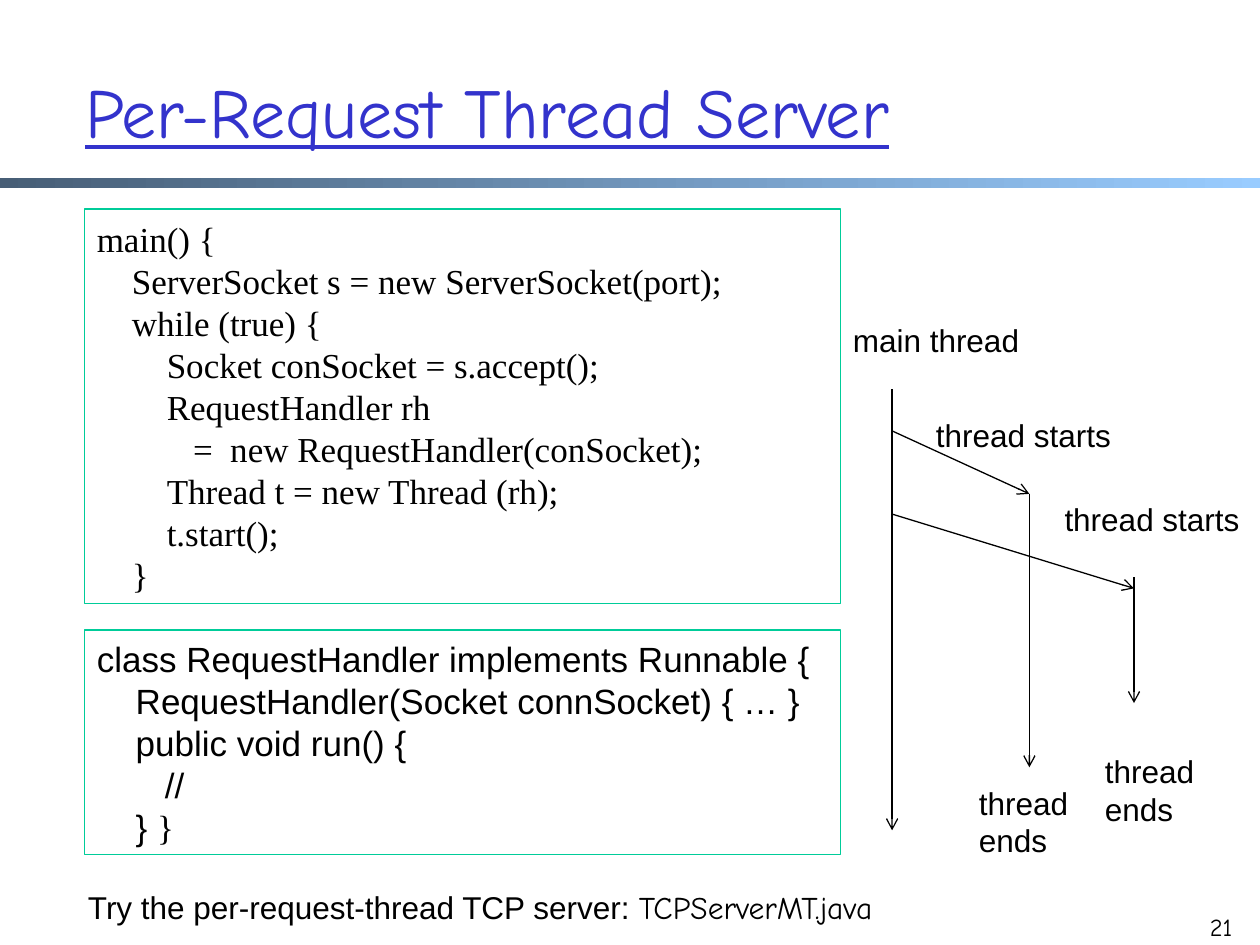
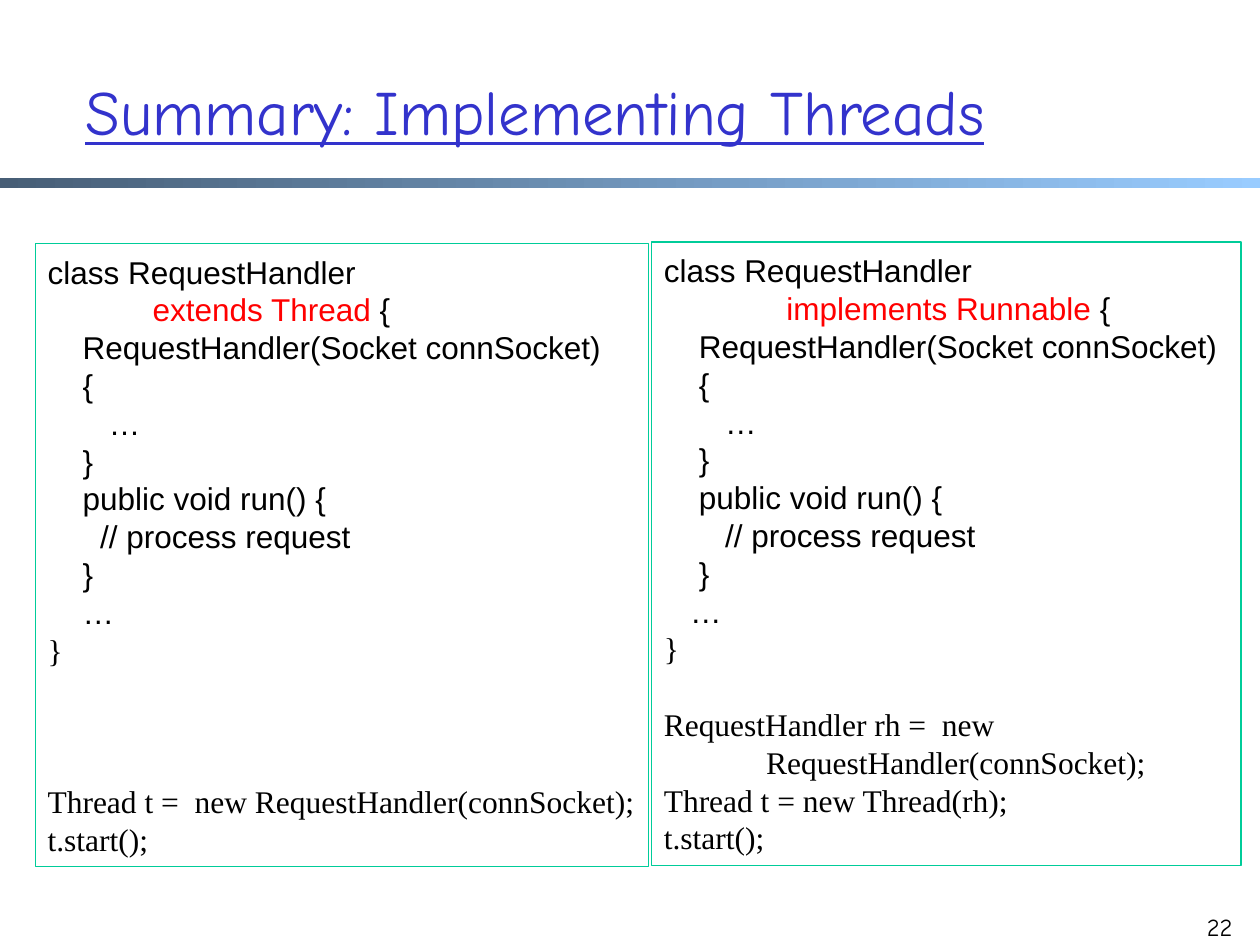
import pptx
import pptx.dml.color
import pptx.enum.shapes
import pptx.enum.text
import pptx.oxml
import pptx.oxml.ns
import pptx.util
from dataclasses import dataclass
from pptx.util import Inches

BLUE, BLACK, RED, GREEN = "3333CC", "000000", "FF0000", "00CC99"
BAND_FROM, BAND_TO = "475E76", "99CCFF"
COMIC, SANS, SERIF = "Comic Neue", "Arial", "Times New Roman"
SPACE_EM = {SANS: 0.278, SERIF: 0.25, COMIC: 0.25}  # width of one indent column
LEADING = 1.2


@dataclass
class Run:
    text: str
    font: str = SANS
    color: str = BLACK


@dataclass
class Line:
    runs: list
    indent: int = 0  # columns
    gap: int = 0     # empty lines above


def sans(text, indent=0):
    return Line([Run(text)], indent)


def serif(text, indent=0, gap=0):
    return Line([Run(text, SERIF)], indent, gap)


def rgb(value):
    return pptx.dml.color.RGBColor.from_string(value)


def write_lines(tf, lines, size):
    """One paragraph per line, indented by whole columns."""
    for i, line in enumerate(lines):
        p = tf.paragraphs[0] if i == 0 else tf.add_paragraph()
        p.alignment = pptx.enum.text.PP_ALIGN.LEFT
        p.line_spacing = pptx.util.Pt(LEADING * size)
        p.space_before = pptx.util.Pt(line.gap * LEADING * size)
        columns = line.indent * SPACE_EM[line.runs[0].font]
        p._p.get_or_add_pPr().set("marL", str(pptx.util.Pt(columns * size)))
        for run in line.runs:
            r = p.add_run()
            r.text = run.text
            r.font.name = run.font
            r.font.size = pptx.util.Pt(size)
            r.font.color.rgb = rgb(run.color)


def add_text(slide, box, lines, size):
    sp = slide.shapes.add_textbox(*map(Inches, box))
    tf = sp.text_frame
    tf.word_wrap = True
    write_lines(tf, lines, size)
    return tf


def add_code_box(slide, box, lines, size):
    sp = slide.shapes.add_shape(
        pptx.enum.shapes.MSO_SHAPE.RECTANGLE, *map(Inches, box))
    sp.shadow.inherit = False
    sp.fill.background()
    sp.line.color.rgb = rgb(GREEN)
    sp.line.width = pptx.util.Pt(0.75)
    tf = sp.text_frame
    tf.word_wrap = True
    tf.margin_right = Inches(0.05)
    tf.vertical_anchor = pptx.enum.text.MSO_ANCHOR.MIDDLE
    write_lines(tf, lines, size)


def add_arrow(slide, x1, y1, x2, y2):
    cn = slide.shapes.add_connector(
        pptx.enum.shapes.MSO_CONNECTOR.STRAIGHT, *map(Inches, (x1, y1, x2, y2)))
    cn.line.color.rgb = rgb(BLACK)
    cn.line.width = pptx.util.Pt(0.75)
    ln = cn.line._get_or_add_ln()
    ln.append(pptx.oxml.parse_xml(
        f'<a:tailEnd {pptx.oxml.ns.nsdecls("a")} type="arrow"/>'))
    cn._element.spPr.append(pptx.oxml.parse_xml(
        f'<a:effectLst {pptx.oxml.ns.nsdecls("a")}/>'))


def add_base_slide(prs, title, title_size, number):
    """Blank slide with the shared band, title and page number."""
    slide = prs.slides.add_slide(prs.slide_layouts[6])

    # Band
    band = slide.shapes.add_shape(
        pptx.enum.shapes.MSO_SHAPE.RECTANGLE,
        0, Inches(1.41), prs.slide_width, Inches(0.08))
    band.shadow.inherit = False
    band.line.fill.background()
    band.fill.gradient()
    band.fill.gradient_angle = 0
    for stop, color in zip(band.fill.gradient_stops, (BAND_FROM, BAND_TO)):
        stop.color.rgb = rgb(color)

    # Title
    tf = add_text(slide, (0.58, 0.25, 8.5, 1.25),
                  [Line([Run(title, COMIC, BLUE)])], title_size)
    tf.vertical_anchor = pptx.enum.text.MSO_ANCHOR.MIDDLE
    tf.paragraphs[0].line_spacing = 1.0
    tf.paragraphs[0].runs[0].font.underline = True

    # Page number
    tf = add_text(slide, (9.38, 7.19, 0.5, 0.3),
                  [Line([Run(str(number), COMIC)])], 14)
    tf.paragraphs[0].alignment = pptx.enum.text.PP_ALIGN.RIGHT
    tf.paragraphs[0].line_spacing = 1.0
    return slide


def add_thread_diagram(slide, left, top):
    # Labels: x, y, width and lines
    labels = [
        (0, 0, 1.55, ["main thread"]),
        (0.66, 0.75, 1.65, ["thread starts"]),
        (1.68, 1.42, 1.65, ["thread starts"]),
        (2, 3.42, 1.08, ["thread", "ends"]),
        (1, 3.67, 1.08, ["thread", "ends"]),
    ]
    for x, y, width, words in labels:
        add_text(slide, (left + x, top + y, width, 0.1 + 0.3 * len(words)),
                 [sans(word) for word in words], 18)

    # Life lines of the main thread and its two workers, then the two starts
    main_x, first_x, second_x = left + 0.41, left + 1.5, left + 2.33
    arrows = [
        (main_x, 0.59, main_x, 4.09),
        (first_x, 1.42, first_x, 3.59),
        (second_x, 2.08, second_x, 3.08),
        (main_x, 0.92, first_x, 1.42),
        (main_x, 1.58, second_x, 2.17),
    ]
    for x1, y1, x2, y2 in arrows:
        add_arrow(slide, x1, top + y1, x2, top + y2)


def build_server_slide(prs):
    slide = add_base_slide(prs, "Per-Request Thread Server", 40, 21)
    add_code_box(slide, (0.67, 1.66, 6, 3.13), [
        serif("main() {"),
        serif("ServerSocket s = new ServerSocket(port);", 4),
        serif("while (true) {", 4),
        serif("Socket conSocket = s.accept();", 8),
        serif("RequestHandler rh", 8),
        serif("=  new RequestHandler(conSocket);", 11),
        serif("Thread t = new Thread (rh);", 8),
        serif("t.start();", 8),
        serif("}", 4),
    ], 20)
    add_code_box(slide, (0.67, 5, 6, 1.78), [
        sans("class RequestHandler implements Runnable {"),
        sans("RequestHandler(Socket connSocket) { … }", 4),
        sans("public void run() {", 4),
        sans("//", 7),
        Line([Run("} "), Run("}", SERIF)], 4),
    ], 20)
    add_thread_diagram(slide, 6.67, 2.5)
    add_text(slide, (0.6, 7, 6.83, 0.4), [
        Line([Run("Try the per-request-thread TCP server: "),
              Run("TCPServerMT.java", COMIC)]),
    ], 18)


def handler_class(relation, relation_indent, comment_indent, dots_indent):
    """Class listing shared by both ways to implement a thread."""
    return [
        sans("class RequestHandler"),
        Line([Run(relation, color=RED), Run(" {")], relation_indent),
        sans("RequestHandler(Socket connSocket)", 4),
        sans("{", 4),
        sans("…", 7),
        sans("}", 4),
        sans("public void run() {", 4),
        sans("// process request", comment_indent),
        sans("}", 4),
        sans("…", dots_indent),
        serif("}"),
    ]


def build_summary_slide(prs):
    slide = add_base_slide(prs, "Summary: Implementing Threads", 36, 22)
    add_code_box(slide, (0.28, 1.93, 4.87, 4.95),
                 handler_class("extends Thread", 12, 6, 4) + [
        serif("Thread t =  new RequestHandler(connSocket);", gap=3),
        serif("t.start();"),
    ], 18)
    add_code_box(slide, (5.17, 1.92, 4.68, 4.95),
                 handler_class("implements Runnable", 14, 7, 3) + [
        serif("RequestHandler rh =  new", gap=1),
        serif("RequestHandler(connSocket);", 13),
        serif("Thread t = new Thread(rh);"),
        serif("t.start();"),
    ], 18)


def main():
    prs = pptx.Presentation()
    prs.slide_width, prs.slide_height = Inches(10), Inches(7.5)
    build_server_slide(prs)
    build_summary_slide(prs)
    prs.save("out.pptx")


if __name__ == "__main__":
    main()
